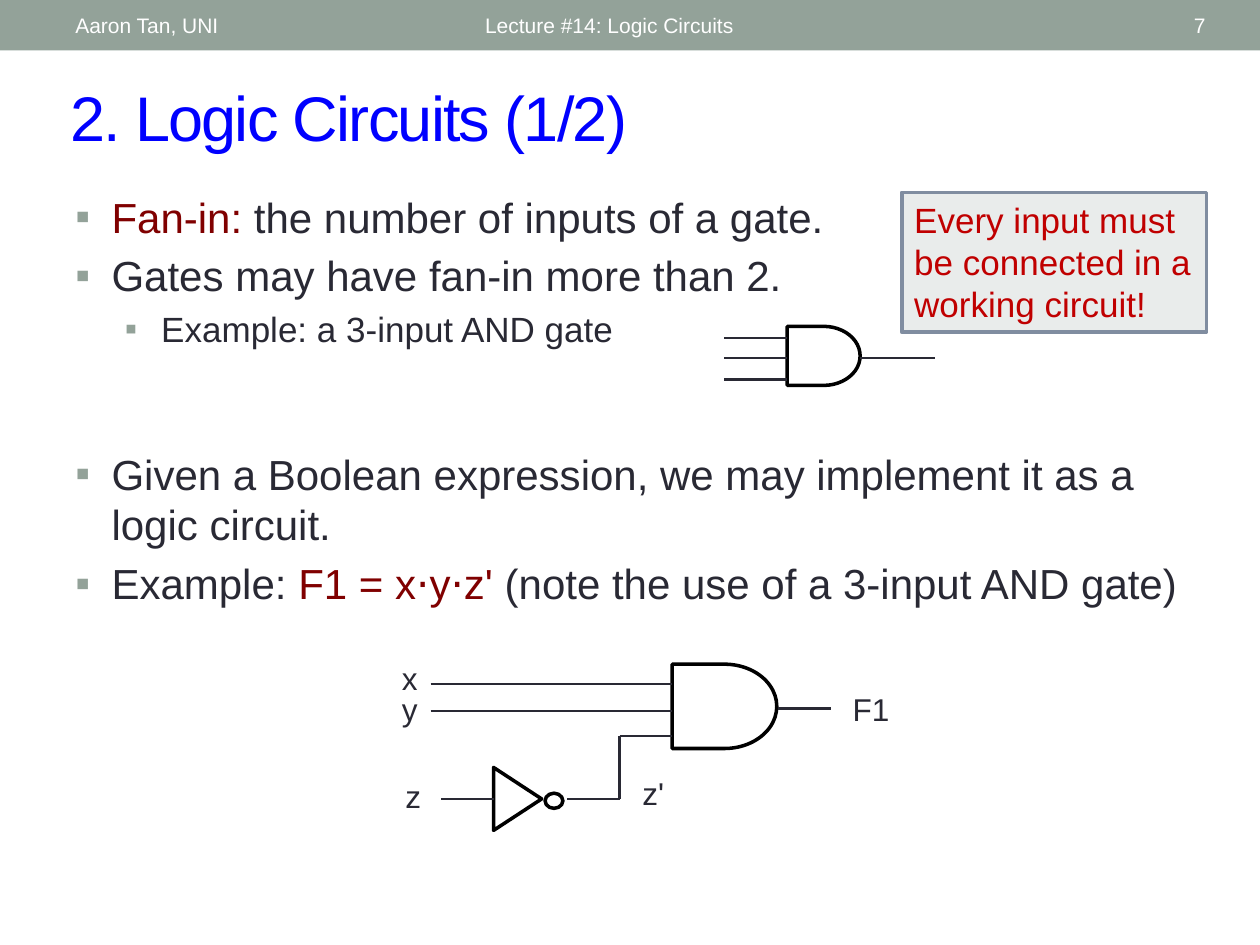
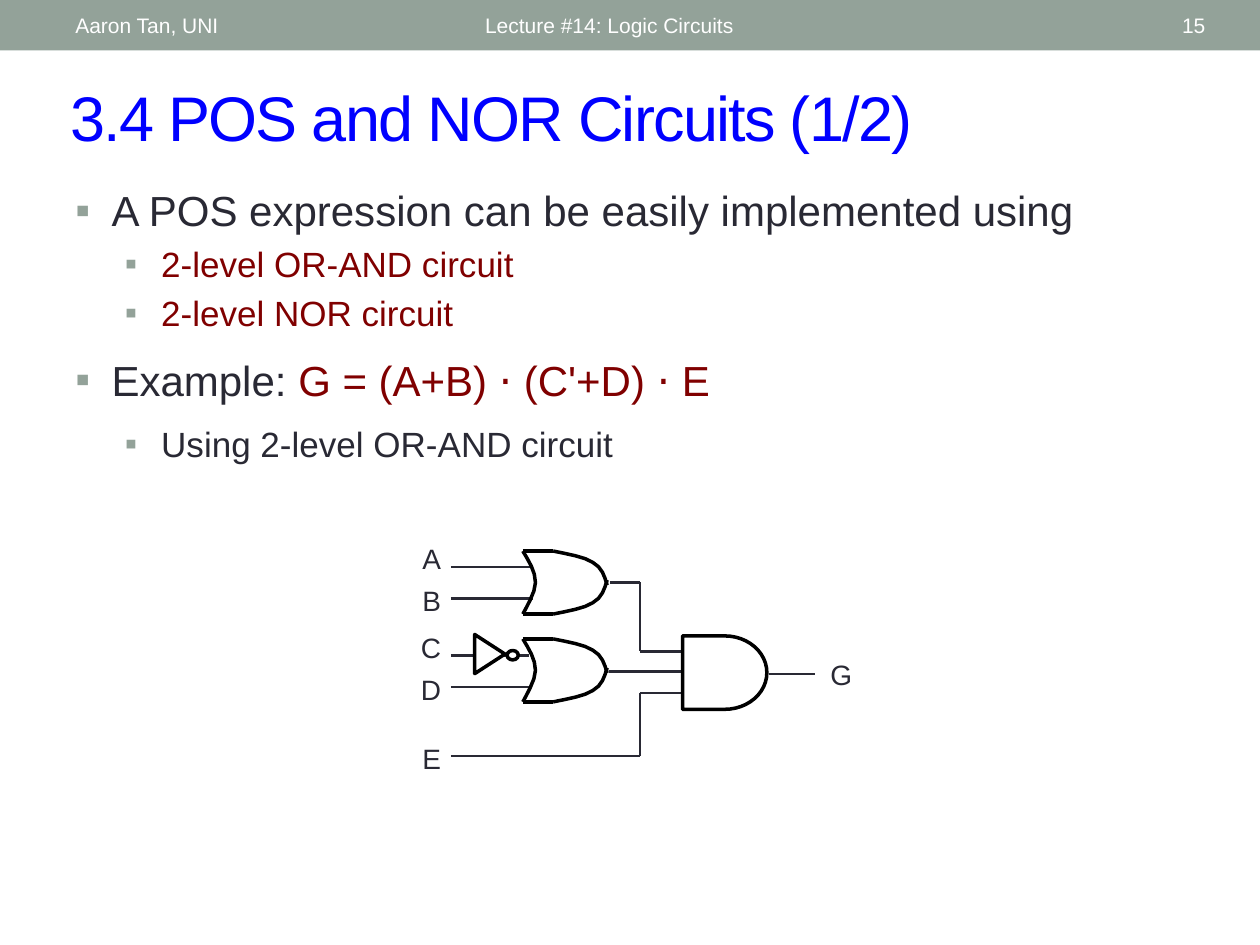
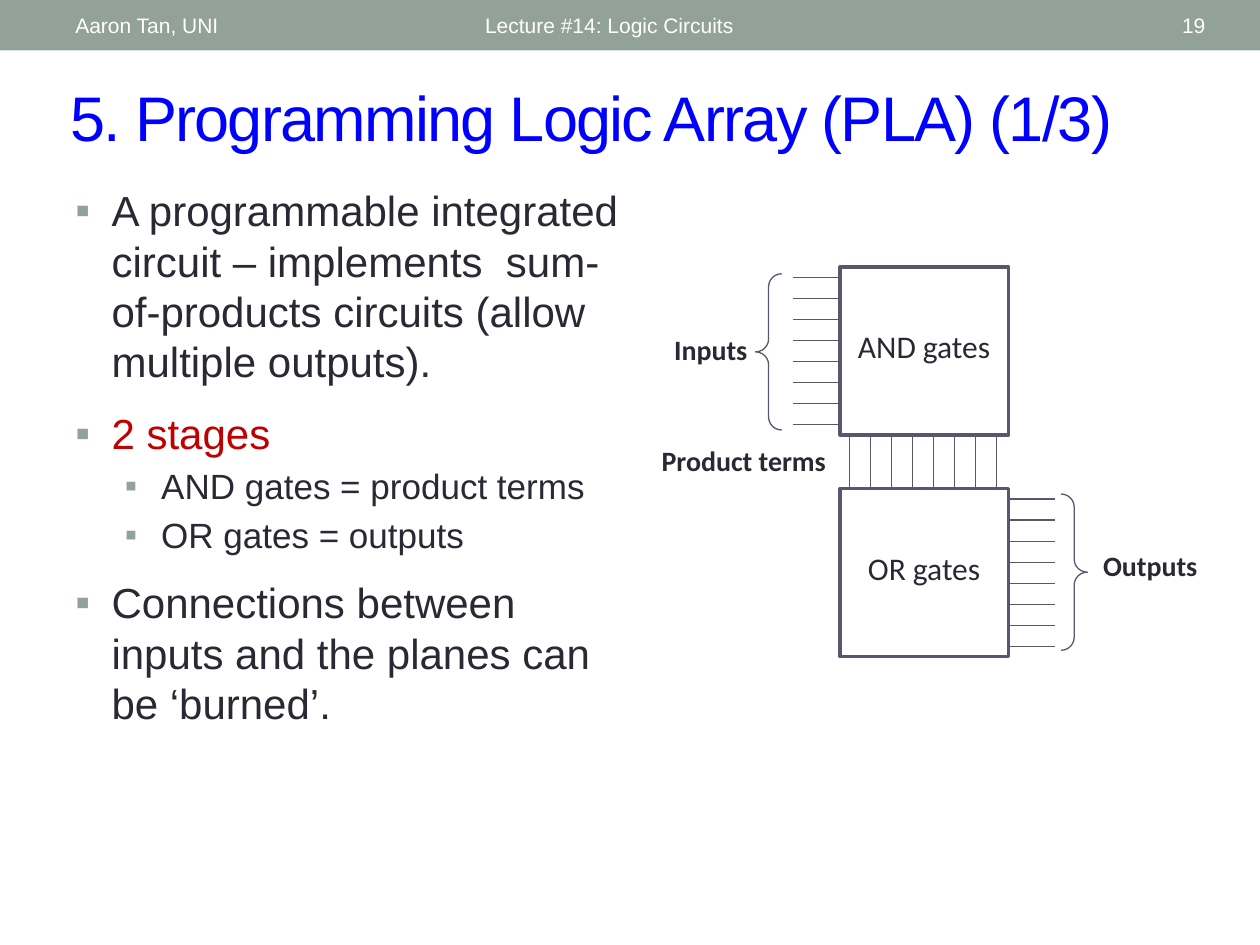
import dataclasses
import itertools

import lxml.etree
import pptx
import pptx.dml.color
import pptx.enum.shapes
import pptx.enum.text
import pptx.oxml.ns
import pptx.util

Cm = pptx.util.Cm
Pt = pptx.util.Pt
qn = pptx.oxml.ns.qn
SHAPE = pptx.enum.shapes.MSO_SHAPE
ALIGN = pptx.enum.text.PP_ALIGN
ANCHOR = pptx.enum.text.MSO_ANCHOR


@dataclasses.dataclass(frozen=True)
class Theme:
    sage: str = "93A299"
    white: str = "FFFFFF"
    title_blue: str = "0000FF"
    ink: str = "292934"
    maroon: str = "800000"
    red: str = "C00000"
    gate: str = "000000"
    plane: str = "57576E"
    callout_fill: str = "E9ECEB"
    callout_edge: str = "808DA0"
    font: str = "Arial"
    plane_font: str = "Calibri"
    title_size: int = 36
    level_sizes: tuple = (24, 20)
    level_margins: tuple = (0.73, 1.73)
    hanging: float = 0.73
    header_size: int = 12
    signal_size: int = 18
    small_size: int = 16
    gate_line: float = 2
    wire_line: float = 1.5
    plane_line: float = 2.08
    lead_line: float = 0.75


@dataclasses.dataclass(frozen=True)
class Box:
    """A rectangle on the slide, in centimetres."""
    left: float
    top: float
    width: float
    height: float

    def inner(self, left, top, width, height):
        return Box(self.left + left, self.top + top, width, height)

    def point(self, x, y):
        return Cm(self.left + x), Cm(self.top + y)

    def frame(self):
        return Cm(self.left), Cm(self.top), Cm(self.width), Cm(self.height)


THEME = Theme()
PAGE = Box(0, 0, 25.4, 19.05)
LECTURER = "Aaron Tan, UNI"
LECTURE = "Lecture #14: Logic Circuits"


def rgb(value):
    return pptx.dml.color.RGBColor.from_string(value)


def set_values(target, values):
    for name, value in values.items():
        setattr(target, name, value)


def add_run(paragraph, text, size, color=THEME.ink, font=THEME.font, bold=False):
    run = paragraph.add_run()
    run.text = text
    set_values(run.font, {"size": Pt(size), "name": font, "bold": bold})
    run.font.color.rgb = rgb(color)
    return run


def add_text(slide, box, text, size, color=THEME.ink, font=THEME.font, bold=False,
             align=ALIGN.LEFT, anchor=ANCHOR.TOP):
    frame = slide.shapes.add_textbox(*box.frame()).text_frame
    set_values(frame, {"word_wrap": True, "vertical_anchor": anchor})
    frame.paragraphs[0].alignment = align
    return add_run(frame.paragraphs[0], text, size, color, font, bold)


def paint(shape, fill=None, line=None, width=0):
    shape.shadow.inherit = False
    if fill:
        shape.fill.solid()
        shape.fill.fore_color.rgb = rgb(fill)
    else:
        shape.fill.background()
    if line:
        shape.line.color.rgb = rgb(line)
        shape.line.width = Pt(width)
    else:
        shape.line.fill.background()
    return shape


def add_shape(slide, kind, box, **look):
    return paint(slide.shapes.add_shape(kind, *box.frame()), **look)


def add_wire(slide, box, *points, color=THEME.ink, width=THEME.wire_line):
    """Join the points, given relative to the box, with straight lines."""
    for start, end in itertools.pairwise(points):
        wire = slide.shapes.add_connector(
            pptx.enum.shapes.MSO_CONNECTOR.STRAIGHT, *box.point(*start), *box.point(*end))
        wire.line.color.rgb = rgb(color)
        wire.line.width = Pt(width)
        lxml.etree.SubElement(wire._element.spPr, qn("a:effectLst"))


def add_and_gate(slide, box):
    add_shape(slide, SHAPE.FLOWCHART_DELAY, box, line=THEME.gate, width=THEME.gate_line)


def add_inverter(slide, box, fill=None):
    """Fill the box with the triangle and set the bubble to its right."""
    look = {"fill": fill, "line": THEME.gate, "width": THEME.gate_line}
    shift = (box.width - box.height) / 2
    upright = box.inner(shift, -shift, box.height, box.width)
    add_shape(slide, SHAPE.FLOWCHART_MERGE, upright, **look).rotation = 270
    bubble = box.inner(1.07 * box.width, 0.41 * box.height,
                       0.37 * box.width, 0.24 * box.height)
    add_shape(slide, SHAPE.OVAL, bubble, **look)


def bezier(start, first, second, end, steps=4):
    for step in range(steps + 1):
        t = step / steps
        weights = ((1 - t) ** 3, 3 * t * (1 - t) ** 2, 3 * t * t * (1 - t), t ** 3)
        yield tuple(sum(w * c for w, c in zip(weights, axis))
                    for axis in zip(start, first, second, end))


def add_or_gate(slide, box):
    """Draw the hollow back, the two straight sides and the two halves of the nose."""
    back = [*bezier((0, 0), (0.07, 0.16), (0.15, 0.32), (0.15, 0.5)),
            *bezier((0.15, 0.5), (0.15, 0.66), (0.03, 0.92), (0, 1))]
    upper = [*bezier((0.36, 0), (0.54, 0.05), (0.73, 0.09), (0.83, 0.18)),
             *bezier((0.83, 0.18), (0.94, 0.26), (0.97, 0.4), (1, 0.54))]
    lower = [(x, 1 - y) for x, y in upper]
    for curve in (back, upper, lower):
        outline = [box.point(x * box.width, y * box.height) for x, y in curve]
        builder = slide.shapes.build_freeform(*outline[0])
        builder.add_line_segments(outline[1:], close=False)
        paint(builder.convert_to_shape(), line=THEME.gate, width=THEME.gate_line)
    for y in (0, box.height):
        add_wire(slide, box, (0, y), (0.36 * box.width, y),
                 color=THEME.gate, width=THEME.gate_line)


def add_header(slide, box, number):
    add_shape(slide, SHAPE.RECTANGLE, box, fill=THEME.sage)
    for left, width, text, align in ((9.53, 11.43, LECTURE, ALIGN.LEFT),
                                     (22.15, 2.4, str(number), ALIGN.RIGHT),
                                     (1.27, 8.05, LECTURER, ALIGN.LEFT)):
        add_text(slide, box.inner(left, 0.05, width, 0.91), text, THEME.header_size,
                 THEME.white, align=align, anchor=ANCHOR.MIDDLE)


def add_title(slide, box, title):
    run = add_text(slide, box, title, THEME.title_size, THEME.title_blue,
                   anchor=ANCHOR.MIDDLE)
    run.font._element.set("spc", "-100")


def add_bullets(slide, box, items):
    """Write items of (level, space before in percent, (text, colour) runs)."""
    frame = slide.shapes.add_textbox(*box.frame()).text_frame
    frame.word_wrap = True
    for index, (level, space, runs) in enumerate(items):
        paragraph = frame.add_paragraph() if index else frame.paragraphs[0]
        paragraph.level = level
        for text, color in runs:
            add_run(paragraph, text, THEME.level_sizes[level], color)
        properties = paragraph._p.get_or_add_pPr()
        properties.set("marL", str(Cm(THEME.level_margins[level])))
        properties.set("indent", str(-Cm(THEME.hanging)))
        before = lxml.etree.SubElement(properties, qn("a:spcBef"))
        lxml.etree.SubElement(before, qn("a:spcPct"), val=str(space * 1000))
        bullet_color = lxml.etree.SubElement(properties, qn("a:buClr"))
        lxml.etree.SubElement(bullet_color, qn("a:srgbClr"), val=THEME.sage)
        lxml.etree.SubElement(properties, qn("a:buFont"), typeface=THEME.font)
        lxml.etree.SubElement(properties, qn("a:buChar"), char="▪")


def add_callout(slide, box, text):
    callout = add_shape(slide, SHAPE.RECTANGLE, box, fill=THEME.callout_fill,
                        line=THEME.callout_edge, width=THEME.plane_line)
    frame = callout.text_frame
    set_values(frame, {"word_wrap": True, "vertical_anchor": ANCHOR.TOP})
    frame.paragraphs[0].alignment = ALIGN.LEFT
    add_run(frame.paragraphs[0], text, THEME.level_sizes[1], THEME.red)


def add_three_input_gate(slide, box):
    add_and_gate(slide, box.inner(1.27, 0, 1.47, box.height))
    for y in (0.23, 0.64, 1.07):
        add_wire(slide, box, (0, y), (1.27, y))
    add_wire(slide, box, (2.74, 0.64), (box.width, 0.64))


def add_f1_circuit(slide, box):
    add_and_gate(slide, box.inner(5.73, 0.23, 2.11, 1.7))
    add_inverter(slide, box.inner(2.13, 2.31, 0.97, 1.27))
    for wire in (((0.86, 0.63), (5.72, 0.63)),
                 ((0.86, 1.17), (5.72, 1.17)),
                 ((1.07, 2.95), (2.13, 2.95)),
                 ((3.61, 2.95), (4.67, 2.95), (4.67, 1.68), (5.72, 1.68)),
                 ((7.87, 1.12), (8.94, 1.12))):
        add_wire(slide, box, *wire)
    for signal, left, top, width, align in (("x", 0.01, 0, 0.84, ALIGN.RIGHT),
                                            ("y", 0.01, 0.63, 0.84, ALIGN.RIGHT),
                                            ("z", 0.08, 2.38, 0.84, ALIGN.RIGHT),
                                            ("F1", 9.12, 0.63, 1.47, ALIGN.LEFT),
                                            ("z'", 4.88, 2.31, 1.07, ALIGN.LEFT)):
        add_text(slide, box.inner(left, top, width, 1.02), signal, THEME.signal_size,
                 align=align)


def add_or_and_circuit(slide, box):
    for wire in (((1.01, 0.63), (2.67, 0.63)),
                 ((1.01, 1.27), (2.67, 1.27)),
                 ((1.01, 2.41), (2.59, 2.41)),
                 ((1.01, 3.05), (2.59, 3.05)),
                 ((1.01, 4.44), (4.82, 4.44), (4.82, 3.17), (5.66, 3.17)),
                 ((4.22, 0.94), (4.82, 0.94), (4.82, 2.33), (5.66, 2.33)),
                 ((4.19, 2.74), (5.69, 2.74)),
                 ((7.42, 2.79), (8.36, 2.79))):
        add_wire(slide, box, *wire)
    for top in (0.31, 2.08):
        add_or_gate(slide, box.inner(2.46, top, 1.7, 1.27))
    add_and_gate(slide, box.inner(5.68, 2.02, 1.7, 1.48))
    add_inverter(slide, box.inner(1.49, 1.99, 0.61, 0.79), fill=THEME.white)
    for signal, top in zip("ABCDE", (0, 0.84, 1.78, 2.64, 4.02)):
        add_text(slide, box.inner(0, top, 1.06, 0.94), signal, THEME.small_size,
                 align=ALIGN.RIGHT)
    add_text(slide, box.inner(8.41, 2.34, 0.99, 0.94), "G", THEME.small_size)


def add_plane(slide, box, name):
    add_shape(slide, SHAPE.RECTANGLE, box, fill=THEME.white, line=THEME.plane,
              width=THEME.plane_line)
    add_text(slide, box.inner(-0.13, 1.09, box.width + 0.25, 1.02), name,
             THEME.signal_size, font=THEME.plane_font, align=ALIGN.CENTER)


def add_logic_array(slide, box):
    side, count, lead, drop = 3.39, 8, 0.96, 4.47
    and_plane = box.inner(4.09, 0, side, side)
    or_plane = and_plane.inner(0, drop, side, side)
    add_plane(slide, and_plane, "AND gates")
    add_plane(slide, or_plane, "OR gates")
    thin = {"color": THEME.plane, "width": THEME.lead_line}
    for index in range(count):
        offset = side / count * (index + 0.5)
        column = offset - 0.03
        add_wire(slide, and_plane, (-lead, offset), (0, offset), **thin)
        add_wire(slide, and_plane, (column, drop), (column, side), **thin)
        add_wire(slide, or_plane, (side - 0.03, offset), (side + lead - 0.03, offset), **thin)
    for kind, left, top in ((SHAPE.LEFT_BRACE, 2.38, 0.14), (SHAPE.RIGHT_BRACE, 8.54, 4.58)):
        brace = add_shape(slide, kind, box.inner(left, top, 0.53, 3.15),
                          line=THEME.plane, width=THEME.lead_line)
        brace.adjustments[0] = 0.49
    for name, left, top, width in (("Inputs", 0.36, 1.19, 2.24),
                                   ("Outputs", 8.97, 5.56, 2.74),
                                   ("Product terms", 0, 3.43, 4.29)):
        add_text(slide, box.inner(left, top, width, 0.94), name, THEME.small_size,
                 font=THEME.plane_font, bold=True, align=ALIGN.CENTER)


def add_lecture_slide(deck, number, title):
    slide = deck.slides.add_slide(deck.slide_layouts[6])
    add_header(slide, PAGE.inner(0, 0, PAGE.width, 1.02), number)
    add_title(slide, PAGE.inner(1.17, 1.45, 23.04, 1.78), title)
    return slide


def build_logic_circuits(deck):
    slide = add_lecture_slide(deck, 7, "2. Logic Circuits (1/2)")
    add_bullets(slide, PAGE.inner(1.27, 3.73, 22.86, 3.91), [
        (0, 20, [("Fan-in:", THEME.maroon),
                 (" the number of inputs of a gate.", THEME.ink)]),
        (0, 20, [("Gates may have fan-in more than 2.", THEME.ink)]),
        (1, 20, [("Example: a 3-input AND gate", THEME.ink)])])
    add_bullets(slide, PAGE.inner(1.27, 8.91, 22.86, 5.82), [
        (0, 20, [("Given a Boolean expression, we may implement it as a logic circuit.",
                  THEME.ink)]),
        (0, 20, [("Example: ", THEME.ink), ("F1 = x⋅y⋅z'", THEME.maroon),
                 (" (note the use of a 3-input AND gate)", THEME.ink)])])
    add_f1_circuit(slide, PAGE.inner(7.82, 13.16, 10.6, 3.45))
    add_three_input_gate(slide, PAGE.inner(14.6, 6.58, 4.24, 1.19))
    add_callout(slide, PAGE.inner(18.18, 3.88, 6.14, 2.82),
                "Every input must be connected in a working circuit!")


def build_pos_circuits(deck):
    slide = add_lecture_slide(deck, 15, "3.4 POS and NOR Circuits (1/2)")
    add_bullets(slide, PAGE.inner(1.27, 3.6, 22.86, 6.68), [
        (0, 20, [("A POS expression can be easily implemented using", THEME.ink)]),
        (1, 20, [("2-level OR-AND circuit", THEME.maroon)]),
        (1, 20, [("2-level NOR circuit", THEME.maroon)]),
        (0, 50, [("Example:", THEME.ink), (" G = (A+B) ⋅ (C'+D) ⋅ E", THEME.maroon)]),
        (1, 50, [("Using 2-level OR-AND circuit", THEME.ink)])])
    add_or_and_circuit(slide, PAGE.inner(8.08, 10.8, 9.4, 4.95))


def build_logic_array(deck):
    slide = add_lecture_slide(deck, 19, "5. Programming Logic Array (PLA) (1/3)")
    add_bullets(slide, PAGE.inner(1.27, 3.6, 11.86, 13.44), [
        (0, 20, [("A programmable integrated circuit – implements  sum-of-products "
                  "circuits (allow multiple outputs).", THEME.ink)]),
        (0, 50, [("2 stages", THEME.red)]),
        (1, 20, [("AND gates = product terms", THEME.ink)]),
        (1, 20, [("OR gates = outputs", THEME.ink)]),
        (0, 50, [("Connections between inputs and the planes can be ‘burned’.",
                  THEME.ink)])])
    add_logic_array(slide, PAGE.inner(12.85, 5.38, 11.71, 7.85))


def main():
    deck = pptx.Presentation()
    set_values(deck, {"slide_width": Cm(PAGE.width), "slide_height": Cm(PAGE.height)})
    for build in (build_logic_circuits, build_pos_circuits, build_logic_array):
        build(deck)
    deck.save("out.pptx")


if __name__ == "__main__":
    main()
